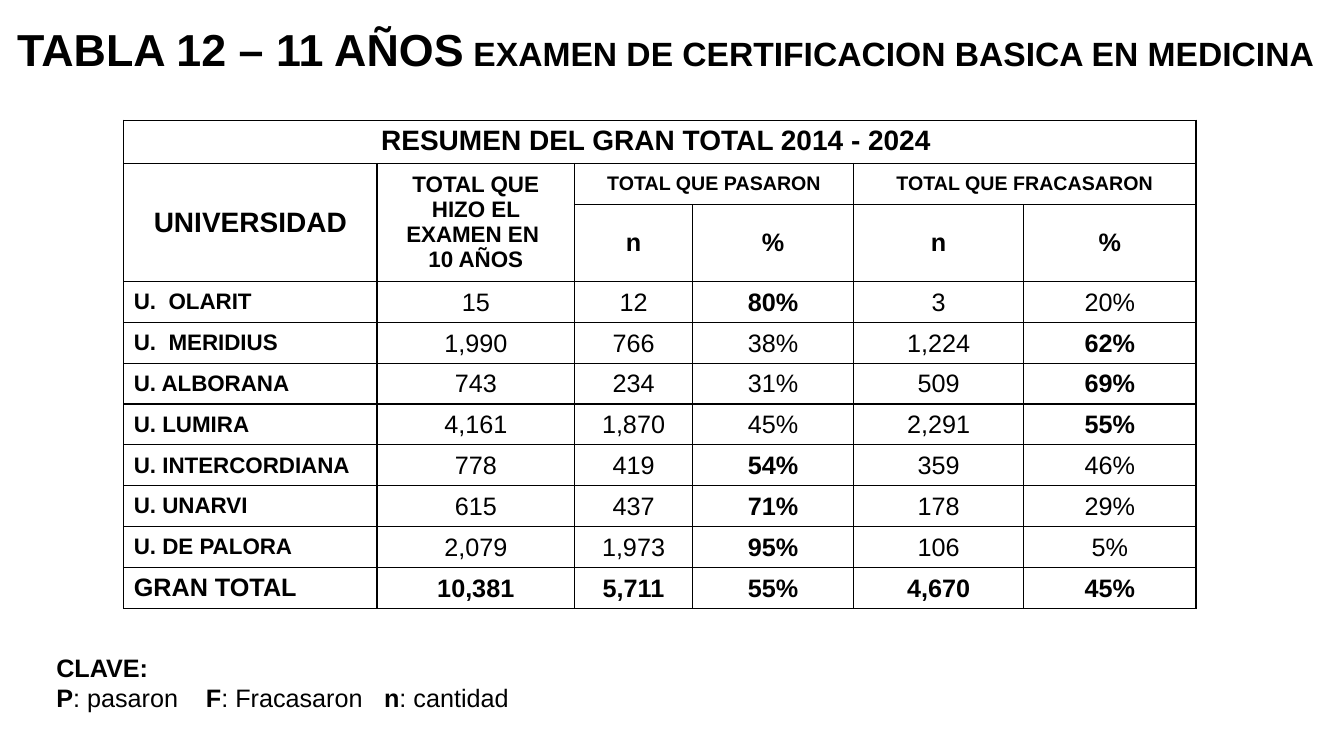
from lxml import etree
from pptx import Presentation
from pptx.dml.color import RGBColor
from pptx.enum import text as t
from pptx.oxml.ns import qn
from pptx.util import Cm, Pt

BLACK = RGBColor(0x00, 0x00, 0x00)
FONT = "Arial"

# Runs are (text, size in points, bold)
TITLE = [
    ("TABLA 12 – 11 AÑOS", 32, True),
    (" EXAMEN DE CERTIFICACION BASICA EN MEDICINA", 24, True),
]
KEY = [
    [("CLAVE:", 18, True)],
    [("P", 18, True), (": pasaron\t", 18, False),
     ("F", 18, True), (": Fracasaron\t", 18, False),
     ("n", 18, True), (": cantidad", 18, False)],
]
KEY_TABS = [3.77, 8.26]

# Headings are (row, column, rows spanned, columns spanned, lines, size)
HEADINGS = [
    (0, 0, 1, 6, ["RESUMEN DEL GRAN TOTAL 2014 - 2024 "], 20),
    (1, 0, 2, 1, ["UNIVERSIDAD"], 20),
    (1, 1, 2, 1, ["TOTAL QUE", "HIZO EL EXAMEN EN ", "10 AÑOS"], 16),
    (1, 2, 1, 2, ["TOTAL QUE PASARON"], 14),
    (1, 4, 1, 2, ["TOTAL QUE FRACASARON"], 14),
    (2, 2, 1, 1, ["n"], 18),
    (2, 3, 1, 1, ["%"], 18),
    (2, 4, 1, 1, ["n"], 18),
    (2, 5, 1, 1, ["%"], 18),
]
GRAND_TOTAL = "GRAN TOTAL"
RESULTS = [
    ("U.  OLARIT", 15, 12, 80, 3, 20),
    ("U.  MERIDIUS", 1990, 766, 38, 1224, 62),
    ("U. ALBORANA", 743, 234, 31, 509, 69),
    ("U. LUMIRA", 4161, 1870, 45, 2291, 55),
    ("U. INTERCORDIANA", 778, 419, 54, 359, 46),
    ("U. UNARVI", 615, 437, 71, 178, 29),
    ("U. DE PALORA", 2079, 1973, 95, 106, 5),
    (GRAND_TOTAL, 10381, 5711, 55, 4670, 45),
]
PERCENT_COLUMNS = (3, 5)
COLUMN_WIDTHS = [6.38, 4.98, 2.97, 4.06, 4.29, 4.34]
HEADING_HEIGHTS = [1.09, 1.04, 1.93]
RESULT_HEIGHT = 1.03


def write(frame, paragraphs, align=t.PP_ALIGN.LEFT):
    for i, runs in enumerate(paragraphs):
        paragraph = frame.paragraphs[0] if i == 0 else frame.add_paragraph()
        paragraph.alignment = align
        for words, size, bold in runs:
            run = paragraph.add_run()
            run.text = words
            run.font.name = FONT
            run.font.size = Pt(size)
            run.font.bold = bold
            run.font.color.rgb = BLACK


def outline(cell):
    """Clear the cell's fill and draw a thin black line on its four sides."""
    cell.fill.background()
    properties = cell._tc.get_or_add_tcPr()
    for i, side in enumerate(("a:lnL", "a:lnR", "a:lnT", "a:lnB")):
        line = etree.Element(qn(side), w=str(Pt(1)))
        fill = etree.SubElement(line, qn("a:solidFill"))
        etree.SubElement(fill, qn("a:srgbClr"), val=str(BLACK))
        properties.insert(i, line)


def add_results_table(slide):
    heights = HEADING_HEIGHTS + [RESULT_HEIGHT] * len(RESULTS)
    table = slide.shapes.add_table(
        len(heights), len(COLUMN_WIDTHS), Cm(3.12), Cm(3.03),
        Cm(sum(COLUMN_WIDTHS)), Cm(sum(heights))).table
    table.first_row = table.horz_banding = False
    for column, width in zip(table.columns, COLUMN_WIDTHS):
        column.width = Cm(width)
    for row, height in zip(table.rows, heights):
        row.height = Cm(height)
    for cell in table.iter_cells():
        outline(cell)
        cell.vertical_anchor = t.MSO_ANCHOR.MIDDLE

    for row, column, down, across, lines, size in HEADINGS:
        cell = table.cell(row, column)
        if down * across > 1:
            cell.merge(table.cell(row + down - 1, column + across - 1))
        write(cell.text_frame, [[(line, size, True)] for line in lines],
              t.PP_ALIGN.CENTER)
    table.cell(0, 0).vertical_anchor = t.MSO_ANCHOR.TOP

    for row, (university, *figures) in enumerate(RESULTS, len(HEADING_HEIGHTS)):
        is_total = university == GRAND_TOTAL
        write(table.cell(row, 0).text_frame,
              [[(university, 18 if is_total else 16, True)]])
        for column, figure in enumerate(figures, 1):
            is_percent = column in PERCENT_COLUMNS
            words = f"{figure}%" if is_percent else f"{figure:,}"
            bold = is_total or (is_percent and figure > 50)
            cell = table.cell(row, column)
            cell.margin_left = cell.margin_right = cell.margin_top = Cm(0.03)
            cell.margin_bottom = 0
            write(cell.text_frame, [[(words, 18, bold)]], t.PP_ALIGN.CENTER)


def add_key(slide):
    frame = slide.shapes.add_textbox(
        Cm(1.17), Cm(16.31), Cm(11.99), Cm(1.8)).text_frame
    frame.word_wrap = True
    write(frame, KEY)
    properties = frame.paragraphs[1]._p.get_or_add_pPr()
    tabs = etree.SubElement(properties, qn("a:tabLst"))
    for position in KEY_TABS:
        etree.SubElement(tabs, qn("a:tab"), pos=str(Cm(position)), algn="l")


def main():
    deck = Presentation()
    deck.slide_width, deck.slide_height = Cm(33.87), Cm(19.05)
    slide = deck.slides.add_slide(deck.slide_layouts[5])

    title = slide.shapes.title
    title.left, title.top = Cm(0.18), Cm(0.43)
    title.width, title.height = Cm(33.55), Cm(1.63)
    title.text_frame.word_wrap = False
    title.text_frame.auto_size = t.MSO_AUTO_SIZE.NONE
    title.text_frame.vertical_anchor = t.MSO_ANCHOR.TOP
    write(title.text_frame, [TITLE])

    add_results_table(slide)
    add_key(slide)
    deck.save("out.pptx")


if __name__ == "__main__":
    main()
